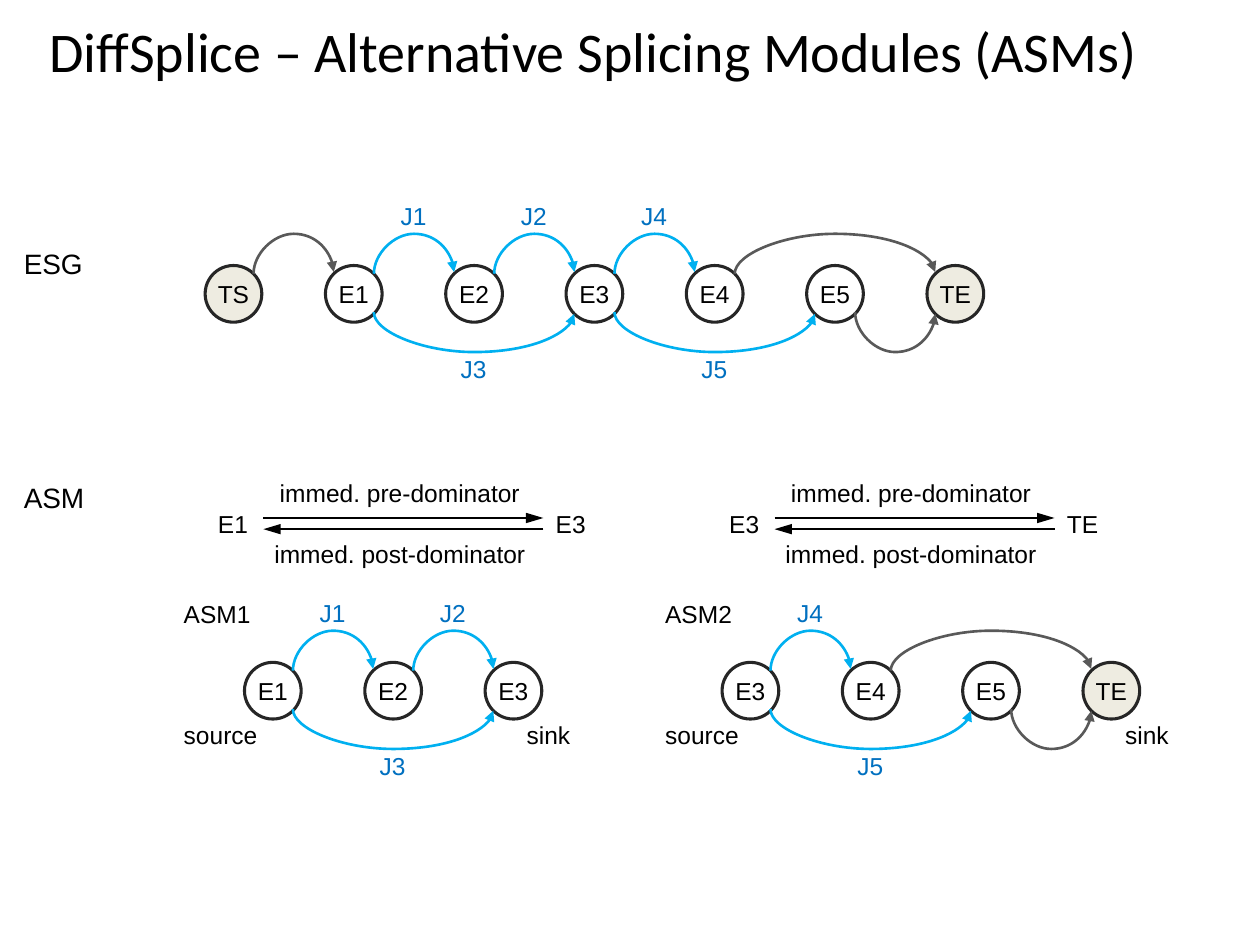
from dataclasses import dataclass
from lxml.etree import SubElement
from pptx import Presentation
from pptx.dml.color import RGBColor
from pptx.enum.shapes import MSO_CONNECTOR, MSO_SHAPE
from pptx.enum.text import MSO_ANCHOR, MSO_AUTO_SIZE, PP_ALIGN
from pptx.oxml.ns import qn
from pptx.util import Pt


@dataclass(frozen=True)
class Theme:
    text: str = "000000"
    label: str = "0070C0"
    junction: str = "00B0F0"
    plain: str = "595959"
    outline: str = "262626"
    terminal: str = "EEECE1"
    font: str = "Arial"
    title_font: str = "Calibri"
    title_size: int = 32
    heading_size: int = 16
    body_size: int = 14


THEME = Theme()

# Content: arcs are (from, to, side, junction name or None)
TITLE = "DiffSplice – Alternative Splicing Modules (ASMs)"
HEADINGS = [("ESG", 137.5), ("ASM", 271.2)]
GRAPHS = [
    {"left": 117.2, "top": 151.7,
     "nodes": ["TS", "E1", "E2", "E3", "E4", "E5", "TE"],
     "arcs": [("TS", "E1", "above", None), ("E1", "E2", "above", "J1"),
              ("E2", "E3", "above", "J2"), ("E4", "TE", "above", None),
              ("E3", "E4", "above", "J4"), ("E1", "E3", "below", "J3"),
              ("E3", "E5", "below", "J5"), ("E5", "TE", "below", None)],
     "captions": []},
    {"left": 139.7, "top": 378.5,
     "nodes": ["E1", "E2", "E3"],
     "arcs": [("E1", "E2", "above", "J1"), ("E2", "E3", "above", "J2"),
              ("E1", "E3", "below", "J3")],
     "captions": [("ASM1", 97.9, -39.6, 53.3), ("source", 97.9, 29.5, 56.9),
                  ("sink", 293.8, 29.5, 39.6)]},
    {"left": 412.6, "top": 378.5,
     "nodes": ["E3", "E4", "E5", "TE"],
     "arcs": [("E4", "TE", "above", None), ("E3", "E4", "above", "J4"),
              ("E3", "E5", "below", "J5"), ("E5", "TE", "below", None)],
     "captions": [("ASM2", 373, -39.6, 53.3), ("source", 373, 29.5, 56.9),
                  ("sink", 635.8, 29.5, 39.6)]},
]
DOMINATORS = [("E1", "E3", 150.5), ("E3", "TE", 442.6)]
TERMINALS = {"TS", "TE"}

# Geometry in points
NODE = 32.4
PITCH = 68.75
RIM = NODE * 0.1464  # inset of the circle's diagonal points
ARC_DEPTH = 23
ARC_STEP = 1  # height between the two ends of an arc
LABEL_WIDTH, TEXT_HEIGHT = 29.5, 24.2
LABEL_OFFSET = {"above": -40.3, "below": 47.2}
ARROW_LENGTH, ARROW_TOP, ARROW_BOTTOM = 160, 296, 302.4
END_WIDTH = 33


def style_runs(text_frame, size, color=THEME.text, font=THEME.font):
    for paragraph in text_frame.paragraphs:
        for run in paragraph.runs:
            run.font.size = Pt(size)
            run.font.name = font
            run.font.color.rgb = RGBColor.from_string(color)


def add_text(shapes, text, left, top, width, size=THEME.body_size,
             color=THEME.text, align=PP_ALIGN.LEFT):
    height = TEXT_HEIGHT if size == THEME.body_size else 26.6
    box = shapes.add_textbox(Pt(left), Pt(top), Pt(width), Pt(height))
    frame = box.text_frame
    frame.word_wrap = False
    frame.auto_size = MSO_AUTO_SIZE.SHAPE_TO_FIT_TEXT
    frame.text = text
    frame.paragraphs[0].alignment = align
    style_runs(frame, size, color)


def add_arrow(shapes, kind, start, end, color, head_length="med"):
    points = [Pt(value) for value in (*start, *end)]
    arrow = shapes.add_connector(kind, *points)
    arrow.line.color.rgb = RGBColor.from_string(color)
    arrow.line.width = Pt(1.5)
    properties = arrow._element.spPr
    SubElement(properties.find(qn("a:ln")), qn("a:tailEnd"),
               type="triangle", w="med", len=head_length)
    SubElement(properties, qn("a:effectLst"))
    return arrow


def add_arc(shapes, start_x, end_x, y, side, color):
    """A curved connector turned a quarter, so that it bows up or down."""
    middle, half = (start_x + end_x) / 2, (end_x - start_x) / 2
    if side == "below":
        half = -half
    arc = add_arrow(shapes, MSO_CONNECTOR.CURVE,
                    (middle + ARC_STEP / 2, y + half),
                    (middle - ARC_STEP / 2, y - half), color)
    properties = arc._element.spPr
    turn = 90 if side == "above" else 270
    properties.find(qn("a:xfrm")).set("rot", str(turn * 60000))
    guides = properties.find(qn("a:prstGeom")).get_or_add_avLst()
    SubElement(guides, qn("a:gd"), name="adj1",
               fmla=f"val {ARC_DEPTH * 100000 // ARC_STEP}")


def add_node(shapes, name, left, top):
    node = shapes.add_shape(MSO_SHAPE.OVAL, Pt(left), Pt(top), Pt(NODE), Pt(NODE))
    node.shadow.inherit = False
    if name in TERMINALS:
        node.fill.solid()
        node.fill.fore_color.rgb = RGBColor.from_string(THEME.terminal)
    else:
        node.fill.background()
    node.line.color.rgb = RGBColor.from_string(THEME.outline)
    node.line.width = Pt(1.75)
    frame = node.text_frame
    frame.margin_left = frame.margin_right = frame.margin_top = frame.margin_bottom = 0
    frame.vertical_anchor = MSO_ANCHOR.MIDDLE
    frame.text = name
    frame.paragraphs[0].alignment = PP_ALIGN.CENTER
    style_runs(frame, THEME.body_size)


def add_graph(slide, graph):
    shapes = slide.shapes.add_group_shape().shapes
    top = graph["top"]
    lefts = {name: graph["left"] + index * PITCH
             for index, name in enumerate(graph["nodes"])}
    for text, left, offset, width in graph["captions"]:
        add_text(shapes, text, left, top + offset, width)
    for name, left in lefts.items():
        add_node(shapes, name, left, top)
    for source, target, side, label in graph["arcs"]:
        start_x, end_x = lefts[source] + NODE - RIM, lefts[target] + RIM
        rim_y = top + (RIM if side == "above" else NODE - RIM)
        add_arc(shapes, start_x, end_x, rim_y - ARC_STEP / 2, side,
                THEME.junction if label else THEME.plain)
        if label:
            add_text(shapes, label, (start_x + end_x - LABEL_WIDTH) / 2,
                     top + LABEL_OFFSET[side], LABEL_WIDTH, color=THEME.label)


def add_dominators(slide, first, last, left):
    shapes = slide.shapes.add_group_shape().shapes
    right = left + ARROW_LENGTH
    for start_x, end_x, y in ((left, right, ARROW_TOP), (right, left, ARROW_BOTTOM)):
        add_arrow(shapes, MSO_CONNECTOR.STRAIGHT, (start_x, y), (end_x, y),
                  THEME.text, head_length="lg")
    add_text(shapes, first, left - END_WIDTH, 287.3, END_WIDTH)
    add_text(shapes, last, right, 287.3, END_WIDTH)
    for text, y, width in (("immed. pre-dominator ", 269.8, 156.2),
                           ("immed. post-dominator ", 304.6, 162.7)):
        add_text(shapes, text, (left + right - width) / 2, y, width,
                 align=PP_ALIGN.CENTER)


def main():
    presentation = Presentation()
    presentation.slide_width, presentation.slide_height = Pt(720), Pt(540)
    slide = presentation.slides.add_slide(presentation.slide_layouts[5])

    # Title
    title = slide.shapes.title
    title.left, title.top, title.width, title.height = Pt(20.9), Pt(0), Pt(699.1), Pt(56.9)
    title.text_frame.text = TITLE
    title.text_frame.vertical_anchor = MSO_ANCHOR.MIDDLE
    title.text_frame.paragraphs[0].alignment = PP_ALIGN.LEFT
    style_runs(title.text_frame, THEME.title_size, font=THEME.title_font)

    # Row headings, dominator pairs and splice graphs
    for text, top in HEADINGS:
        add_text(slide.shapes, text, 6.5, top, 49.3, THEME.heading_size)
    for first, last, left in DOMINATORS:
        add_dominators(slide, first, last, left)
    for graph in GRAPHS:
        add_graph(slide, graph)

    presentation.save("out.pptx")


if __name__ == "__main__":
    main()
